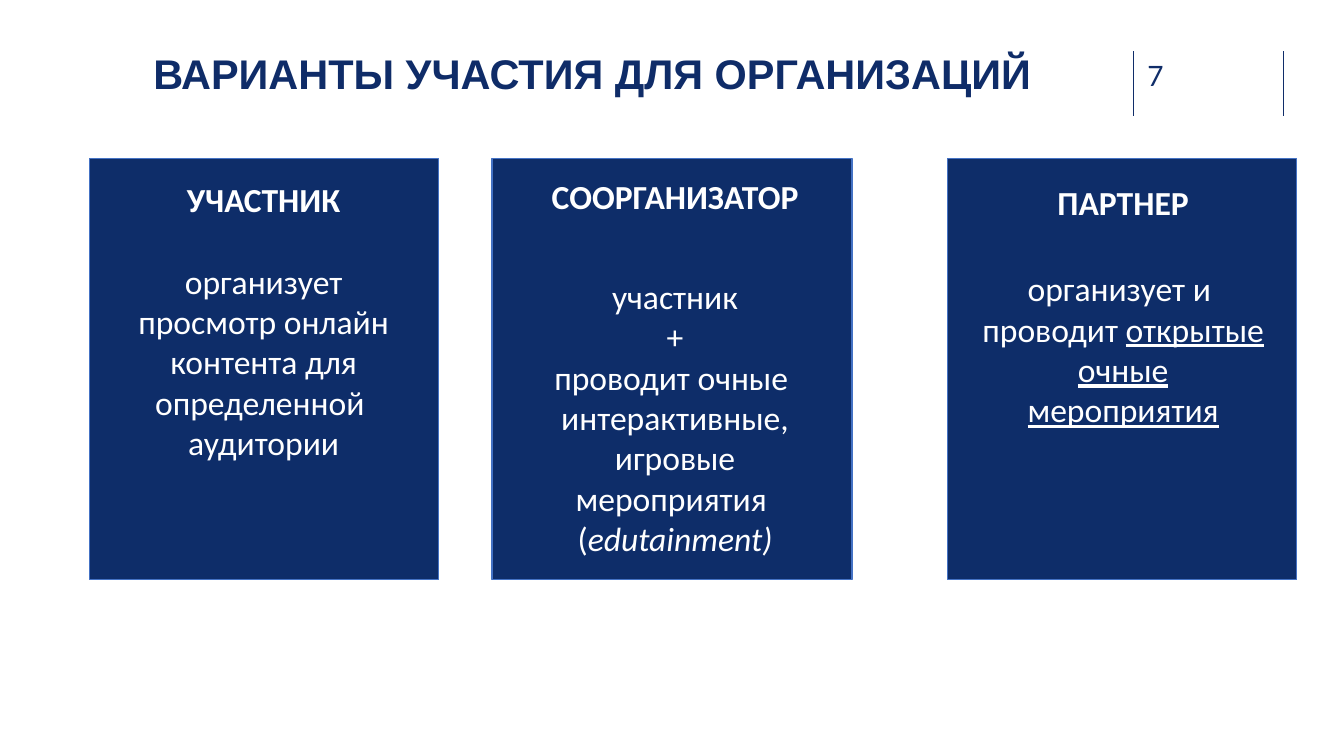
from lxml.etree import SubElement
from pptx import Presentation
from pptx.dml.color import RGBColor
from pptx.enum.shapes import MSO_CONNECTOR, MSO_SHAPE
from pptx.enum.text import MSO_ANCHOR, MSO_AUTO_SIZE, PP_ALIGN
from pptx.oxml.ns import qn
from pptx.util import Inches, Pt

COLORS = {
    "title": "0F2C68",
    "card": "0E2D69",
    "border": "4472C4",
    "number": "102D69",
    "white": "FFFFFF",
}


def rgb(name):
    return RGBColor.from_string(COLORS[name])


def style(run, font, size, color, bold=False):
    run.font.name = font
    run.font.size = Pt(size)
    run.font.color.rgb = rgb(color)
    run.font.bold = bold


prs = Presentation()
prs.slide_width, prs.slide_height = Inches(13.33), Inches(7.5)
s = prs.slides.add_slide(prs.slide_layouts[5])

# Title
title = s.shapes.title
title.left, title.top = Inches(1.42), Inches(0.48)
title.width, title.height = Inches(9.68), Inches(0.85)
title.fill.solid()
title.fill.fore_color.rgb = rgb("white")
tf = title.text_frame
tf.text = "ВАРИАНТЫ УЧАСТИЯ ДЛЯ ОРГАНИЗАЦИЙ"
tf.word_wrap = True
tf.auto_size = MSO_AUTO_SIZE.NONE
tf.vertical_anchor = MSO_ANCHOR.TOP
p = tf.paragraphs[0]
p.alignment = PP_ALIGN.LEFT
p.line_spacing = 0.9
style(p.runs[0], "Arial", 29.6, "title", bold=True)

# Page number between two rules
for x in (11.24, 12.73):
    rule = s.shapes.add_connector(
        MSO_CONNECTOR.STRAIGHT, Inches(x), Inches(0.51), Inches(x), Inches(1.15))
    rule.line.color.rgb = rgb("number")
    rule.line.width = Pt(1)
    SubElement(rule._element.spPr, qn("a:effectLst"))

number = s.shapes.add_textbox(Inches(11.38), Inches(0.58), Inches(0.73), Inches(0.34))
tf = number.text_frame
tf.margin_left = tf.margin_top = tf.margin_right = tf.margin_bottom = 0
tf.word_wrap = True
tf.text = "7"
style(tf.paragraphs[0].runs[0], "Lato", 20, "number")

# Cards: (left, width), text box, heading, gap below heading in points,
# paragraphs as lists of (text, emphasis)
cards = [
    ((0.89, 3.46), (1.03, 1.73, 3.17, 2.93), "УЧАСТНИК", 29.3, [
        [("организует просмотр онлайн контента для определенной ", None)],
        [("аудитории", None)],
    ]),
    ((4.88, 3.57), (5.2, 1.7, 2.99, 3.92), "СООРГАНИЗАТОР", 42.3, [
        [("участник", None)],
        [("+", None)],
        [("проводит очные ", None)],
        [("интерактивные, игровые мероприятия ", None)],
        [("(", None), ("edutainment)", "italic")],
    ]),
    ((9.4, 3.46), (9.61, 1.76, 3.06, 2.57), "ПАРТНЕР", 32.6, [
        [("организует и ", None)],
        [("проводит ", None), ("открытые очные мероприятия", "underline")],
    ]),
]

for (left, width), box, heading, gap, body in cards:
    card = s.shapes.add_shape(
        MSO_SHAPE.RECTANGLE, Inches(left), Inches(1.57), Inches(width), Inches(4.18))
    card.shadow.inherit = False
    card.fill.solid()
    card.fill.fore_color.rgb = rgb("card")
    card.line.color.rgb = rgb("border")
    card.line.width = Pt(1)

    tf = s.shapes.add_textbox(*map(Inches, box)).text_frame
    tf.word_wrap = True
    tf.text = heading
    p = tf.paragraphs[0]
    p.alignment = PP_ALIGN.CENTER
    style(p.runs[0], "Calibri", 24, "white", bold=True)
    for i, parts in enumerate(body):
        p = tf.add_paragraph()
        p.alignment = PP_ALIGN.CENTER
        if i == 0:
            p.space_before = Pt(gap)
        for text, emphasis in parts:
            r = p.add_run()
            r.text = text
            style(r, "Calibri", 24, "white")
            if emphasis == "italic":
                r.font.italic = True
            elif emphasis == "underline":
                r.font.underline = True

prs.save("out.pptx")
